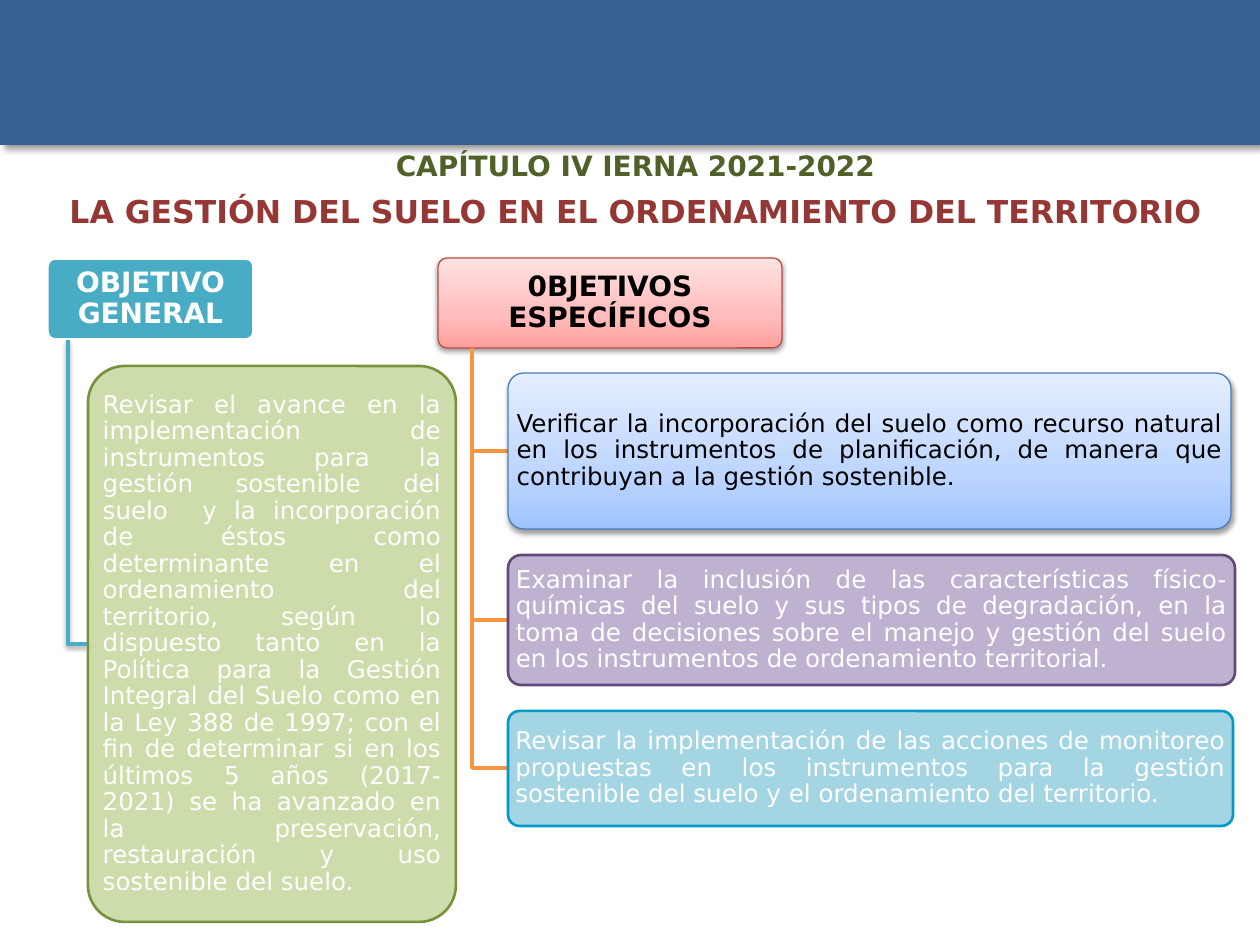
"""Build the slide on the general and specific objectives of soil management."""
from copy import deepcopy

from lxml.etree import SubElement
from pptx import Presentation
from pptx.dml.color import RGBColor
from pptx.enum.shapes import MSO_SHAPE
from pptx.enum.text import MSO_ANCHOR, PP_ALIGN
from pptx.oxml.ns import qn
from pptx.util import Emu, Pt

SCALE = 914400 / 126
THEME = {
    "font": "DejaVu Sans",
    "sizes": {"head": 16, "body": 14, "chapter": 16, "title": 18},
    "banner": "366092",
    "chapter": "4F6128",
    "title": "953734",
    "soft_shadow": (38, 3.1, 1.6, 90),
    "banner_shadow": (40, 4, 3, 45),
    "teal": {"fill": ["49ACC5"], "alpha": 100, "line": "FFFFFF", "weight": 2, "text": "FFFFFF"},
    "green": {"fill": ["9BBB59"], "alpha": 50, "line": "76923C", "weight": 1.5, "text": "FFFFFF"},
    "red": {"fill": ["FFA09D", "FFBCBC", "FFE2E2"], "line": "BD4B48", "weight": 0.75, "text": "000000"},
    "blue": {"fill": ["9FC3FF", "BDD5FF", "E4EEFF"], "line": "4A7DBA", "weight": 0.75, "text": "000000"},
    "purple": {"fill": ["8064A2"], "alpha": 50, "line": "5F497A", "weight": 1.5, "text": "FFFFFF"},
    "cyan": {"fill": ["4BACC6"], "alpha": 50, "line": "0099CC", "weight": 1.5, "text": "FFFFFF"},
}
TREES = [
    {
        "branch": "4BACC6",
        "shadow": True,
        "head": ("OBJETIVO GENERAL", "teal", (47, 258, 207, 82)),
        "children": [
            ("Revisar el avance en la implementación de instrumentos para la gestión sostenible "
             "del suelo  y la incorporación de éstos como determinante en el ordenamiento del "
             "territorio, según lo dispuesto tanto en la Política para la Gestión Integral del "
             "Suelo como en la Ley 388 de 1997; con el fin de determinar si en los últimos 5 años "
             "(2017-2021) se ha avanzado en la preservación, restauración y uso sostenible del "
             "suelo.", "green", (88, 366, 368, 556)),
        ],
    },
    {
        "branch": "F79543",
        "shadow": False,
        "head": ("0BJETIVOS ESPECÍFICOS", "red", (438, 258, 344, 90)),
        "children": [
            ("Verificar la incorporación del suelo como recurso natural en los instrumentos de "
             "planificación, de manera que contribuyan a la gestión sostenible.",
             "blue", (508, 373, 723, 156)),
            ("Examinar la inclusión de las características físico-químicas del suelo y sus tipos "
             "de degradación, en la toma de decisiones sobre el manejo y gestión del suelo en los "
             "instrumentos de ordenamiento territorial.", "purple", (508, 555, 727, 130)),
            ("Revisar la implementación de las acciones de monitoreo propuestas en los "
             "instrumentos para la gestión sostenible del suelo y el ordenamiento del territorio.",
             "cyan", (508, 711, 725, 115)),
        ],
    },
]


def px(*lengths):
    return [Emu(round(length * SCALE)) for length in lengths]


def add_shadow(shape, alpha, blur, distance, angle):
    effects = shape.element.spPr.find(qn("a:effectLst"))
    shadow = SubElement(effects, qn("a:outerShdw"), blurRad=str(Pt(blur)), dist=str(Pt(distance)),
                        dir=str(angle * 60000), algn="ctr", rotWithShape="0")
    color = SubElement(shadow, qn("a:srgbClr"), val="000000")
    SubElement(color, qn("a:alpha"), val=str(alpha * 1000))


deck = Presentation()
deck.slide_width, deck.slide_height = px(1260, 945)
page = deck.slides.add_slide(deck.slide_layouts[6])

banner = page.shapes.add_shape(MSO_SHAPE.RECTANGLE, *px(0, 0, 1260, 145))
banner.fill.solid()
banner.fill.fore_color.rgb = RGBColor.from_string(THEME["banner"])
banner.line.fill.background()
banner.shadow.inherit = False
add_shadow(banner, *THEME["banner_shadow"])

for tree in TREES:
    head_left, head_top, head_width, head_height = tree["head"][2]
    trunk = head_left + round(head_width / 10)
    for item in [tree["head"], *tree["children"]]:
        text, style_name, (left, top, width, height) = item
        style = THEME[style_name]
        is_head = item is tree["head"]

        if not is_head:
            middle = top + height // 2
            builder = page.shapes.build_freeform(trunk, head_top + head_height, scale=SCALE)
            builder.add_line_segments([(trunk, middle), (left, middle)], close=False)
            branch = builder.convert_to_shape()
            branch.fill.background()
            branch.line.color.rgb = RGBColor.from_string(tree["branch"])
            branch.line.width = Pt(2)
            branch.shadow.inherit = False
            if tree["shadow"]:
                add_shadow(branch, *THEME["soft_shadow"])

        box = page.shapes.add_shape(MSO_SHAPE.ROUNDED_RECTANGLE, *px(left, top, width, height))
        box.adjustments[0] = 0.1
        box.line.color.rgb = RGBColor.from_string(style["line"])
        box.line.width = Pt(style["weight"])
        box.shadow.inherit = False
        if len(style["fill"]) == 1:
            box.fill.solid()
            box.fill.fore_color.rgb = RGBColor.from_string(style["fill"][0])
            color = box.element.spPr.find(qn("a:solidFill")).find(qn("a:srgbClr"))
            SubElement(color, qn("a:alpha"), val=str(style["alpha"] * 1000))
        else:
            box.fill.gradient()
            box.fill.gradient_angle = 90
            stops = box.element.spPr.find(qn("a:gradFill")).find(qn("a:gsLst"))
            stops.insert(1, deepcopy(stops[0]))
            for stop, position, shade in zip(box.fill.gradient_stops, (0, 0.35, 1), style["fill"]):
                stop.position = position
                stop.color.rgb = RGBColor.from_string(shade)
            add_shadow(box, *THEME["soft_shadow"])

        frame = box.text_frame
        side, edge = px(4, 3)
        settings = {"word_wrap": True, "vertical_anchor": MSO_ANCHOR.MIDDLE, "margin_left": side,
                    "margin_right": side, "margin_top": edge, "margin_bottom": edge}
        for name, value in settings.items():
            setattr(frame, name, value)
        para = frame.paragraphs[0]
        para.alignment = PP_ALIGN.CENTER if is_head else PP_ALIGN.JUSTIFY
        para.line_spacing = 0.9
        span = para.add_run()
        span.text = text
        size = THEME["sizes"]["head" if is_head else "body"]
        for name, value in {"name": THEME["font"], "size": Pt(size), "bold": is_head}.items():
            setattr(span.font, name, value)
        span.font.color.rgb = RGBColor.from_string(style["text"])

heading = page.shapes.add_textbox(*px(30, 142, 1211, 96)).text_frame
heading.word_wrap = True
lines = {"chapter": "CAPÍTULO IV IERNA 2021-2022",
         "title": "LA GESTIÓN DEL SUELO EN EL ORDENAMIENTO DEL TERRITORIO"}
for role, text in lines.items():
    if role == "chapter":
        para = heading.paragraphs[0]
    else:
        para = heading.add_paragraph()
        para.space_before = Pt(6)
    para.alignment = PP_ALIGN.CENTER
    span = para.add_run()
    span.text = text
    for name, value in {"name": THEME["font"], "size": Pt(THEME["sizes"][role]), "bold": True}.items():
        setattr(span.font, name, value)
    span.font.color.rgb = RGBColor.from_string(THEME[role])

deck.save("out.pptx")
